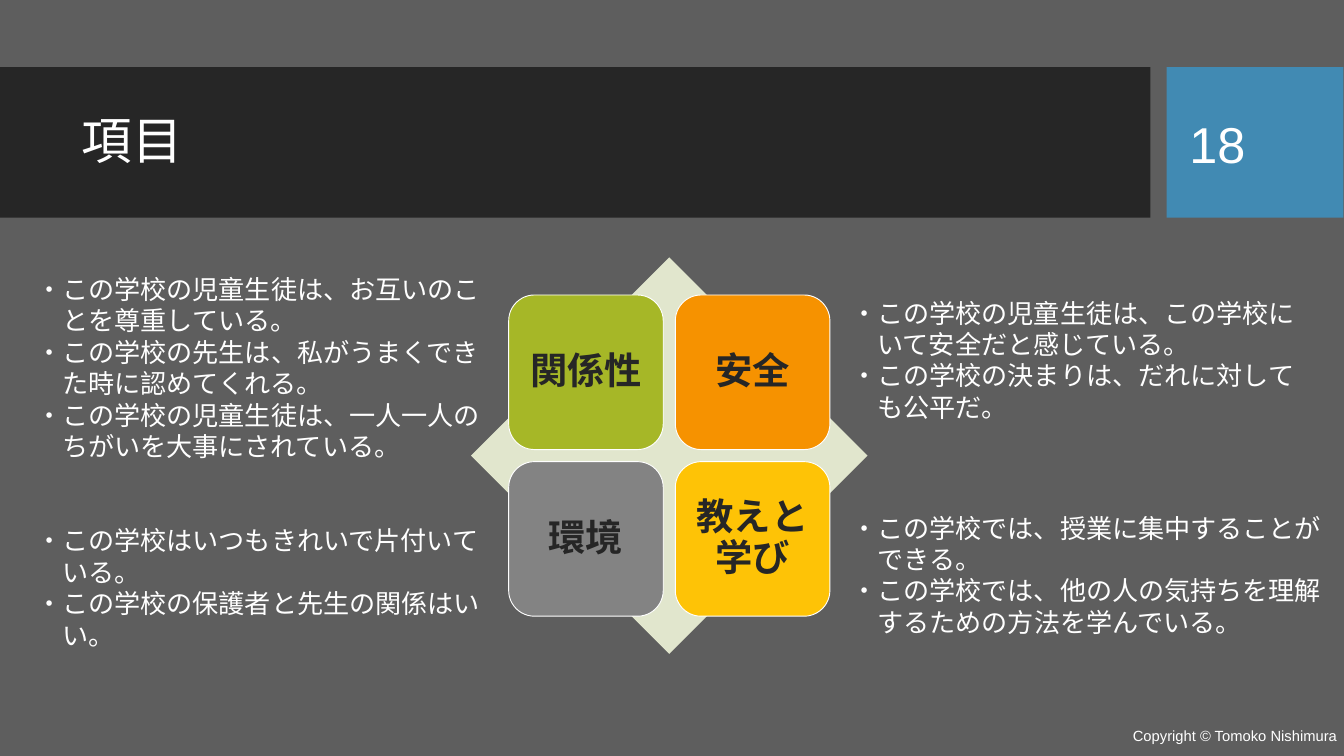
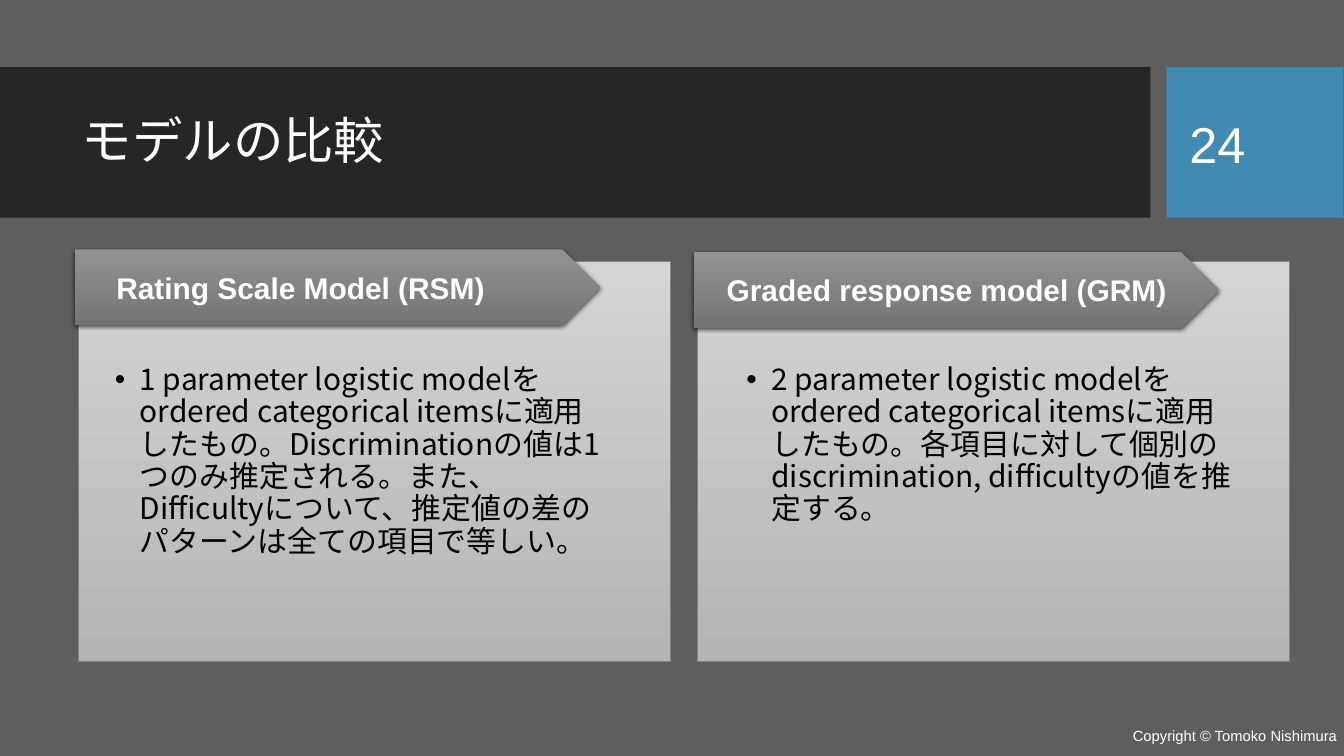
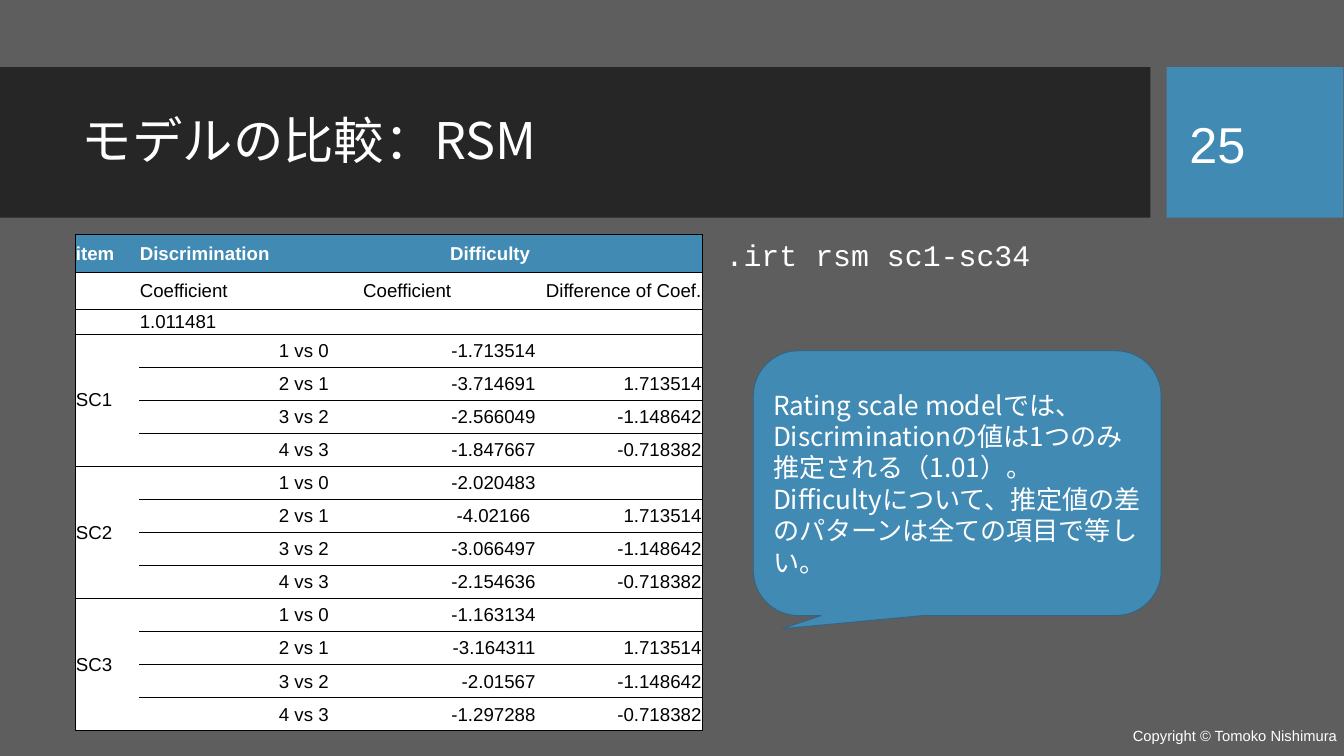
import dataclasses

import pptx
import pptx.dml.color
import pptx.enum.shapes
import pptx.enum.text
import pptx.oxml.ns
import pptx.util
from lxml import etree

EMU_PER_PX = 9144  # 100 px to the inch
SHAPE = pptx.enum.shapes.MSO_SHAPE
ALIGN = pptx.enum.text.PP_ALIGN
ANCHOR = pptx.enum.text.MSO_ANCHOR
AUTO_SIZE = pptx.enum.text.MSO_AUTO_SIZE


@dataclasses.dataclass(frozen=True)
class Theme:
    # Colours
    background: str = "5E5E5E"
    band: str = "262626"
    accent: str = "418AB3"
    accent_edge: str = "306684"
    white: str = "FFFFFF"
    black: str = "000000"
    diamond: str = "E1E6CD"
    green: str = "A6B727"
    orange: str = "F69200"
    gray: str = "838383"
    yellow: str = "FEC306"
    panel: tuple = ("D5D5D5", "B4B4B4")
    tab: tuple = ("929292", "747474")
    # Fonts
    japanese: str = "Noto Sans CJK JP"
    latin: str = "Arial"
    code: str = "Courier New"
    # Type sizes in points
    title: float = 54
    tile: float = 40
    heading: float = 32
    body: float = 28
    table: float = 20
    footer: float = 15.8


THEME = Theme()

TILES = [
    ("関係性", THEME.green),
    ("安全", THEME.orange),
    ("環境", THEME.gray),
    ("教えと学び", THEME.yellow),
]
# Each list: left, top, width, height and its questions
QUESTION_LISTS = [
    ((1257, 437, 692, 199), [
        "・この学校の児童生徒は、この学校にいて安全だと感じている。",
        "・この学校の決まりは、だれに対しても公平だ。",
    ]),
    ((1257, 757, 724, 199), [
        "・この学校では、授業に集中することができる。",
        "・この学校では、他の人の気持ちを理解するための方法を学んでいる。",
    ]),
    ((44, 402, 682, 293), [
        "・この学校の児童生徒は、お互いのことを尊重している。",
        "・この学校の先生は、私がうまくできた時に認めてくれる。",
        "・この学校の児童生徒は、一人一人のちがいを大事にされている。",
    ]),
    ((44, 776, 682, 199), [
        "・この学校はいつもきれいで片付いている。",
        "・この学校の保護者と先生の関係はいい。",
    ]),
]
RSM_TEXT = (
    "1 parameter logistic modelをordered categorical itemsに適用したもの。"
    "Discriminationの値は1つのみ推定される。また、Difficultyについて、"
    "推定値の差のパターンは全ての項目で等しい。"
)
GRM_TEXT = (
    "2 parameter logistic modelをordered categorical itemsに適用したもの。"
    "各項目に対して個別のdiscrimination, difficultyの値を推定する。"
)
CALLOUT_TEXT = [
    "Rating scale modelでは、Discriminationの値は1つのみ推定される（1.01）。",
    "Difficultyについて、推定値の差のパターンは全ての項目で等しい。",
]
STEPS = ["1 vs 0", "2 vs 1", "3 vs 2", "4 vs 3"]
STEP_DIFFERENCES = ["", "1.713514", "-1.148642", "-0.718382"]
DIFFICULTIES = {
    "SC1": ["-1.713514", "-3.714691", "-2.566049", "-1.847667"],
    "SC2": ["-2.020483", "-4.02166 ", "-3.066497", "-2.154636"],
    "SC3": ["-1.163134", "-3.164311", "-2.01567", "-1.297288"],
}


# Basic helpers
def px(length):
    return pptx.util.Emu(int(length * EMU_PER_PX))


def rgb(colour):
    return pptx.dml.color.RGBColor.from_string(colour)


def add_xml(parent, tag, **attributes):
    return etree.SubElement(parent, pptx.oxml.ns.qn(tag), **attributes)


def write(text_frame, paragraphs, size, font=THEME.japanese, colour=THEME.white,
          bold=False, align=ALIGN.LEFT, spacing=None, hanging=0, bullet=None):
    for index, text in enumerate(paragraphs):
        paragraph = text_frame.paragraphs[0] if index == 0 else text_frame.add_paragraph()
        properties = paragraph._p.get_or_add_pPr()
        if hanging:
            properties.set("marL", str(px(hanging)))
            properties.set("indent", str(-px(hanging)))
        if bullet:
            add_xml(properties, "a:buFont", typeface=THEME.latin)
            add_xml(properties, "a:buChar", char=bullet)
        paragraph.alignment = align
        if spacing:
            paragraph.line_spacing = spacing
        run = paragraph.add_run()
        run.text = text
        run.font.size = pptx.util.Pt(size)
        run.font.bold = bold
        run.font.color.rgb = rgb(colour)
        run.font.name = font
        add_xml(run._r.get_or_add_rPr(), "a:ea", typeface=font)


def add_text(slide, box, paragraphs, size, anchor=ANCHOR.TOP, wrap=True,
             grow=False, **style):
    text_frame = slide.shapes.add_textbox(*map(px, box)).text_frame
    text_frame.word_wrap = wrap
    text_frame.vertical_anchor = anchor
    text_frame.auto_size = AUTO_SIZE.SHAPE_TO_FIT_TEXT if grow else AUTO_SIZE.NONE
    write(text_frame, paragraphs, size, **style)


def add_block(slide, kind, box, fill, line=None, line_width=1.0):
    """Add a shape; a pair of colours as fill makes a top-to-bottom gradient."""
    shape = slide.shapes.add_shape(kind, *map(px, box))
    shape.shadow.inherit = False
    if isinstance(fill, tuple):
        shape.fill.gradient()
        shape.fill.gradient_angle = 270
        for stop, colour in zip(shape.fill.gradient_stops, fill):
            stop.color.rgb = rgb(colour)
    else:
        shape.fill.solid()
        shape.fill.fore_color.rgb = rgb(fill)
    if line:
        shape.line.color.rgb = rgb(line)
        shape.line.width = pptx.util.Pt(line_width)
    else:
        shape.line.fill.background()
    return shape


def add_shadow(shape):
    effects = shape._element.spPr.find(pptx.oxml.ns.qn("a:effectLst"))
    shadow = add_xml(effects, "a:outerShdw", blurRad=str(pptx.util.Pt(4.5)),
                     dist=str(pptx.util.Pt(1.5)), dir="5400000", rotWithShape="0")
    colour = add_xml(shadow, "a:srgbClr", val=THEME.black)
    add_xml(colour, "a:alpha", val="63000")


# Parts every slide shares
def add_framed_slide(presentation, title, number):
    slide = presentation.slides.add_slide(presentation.slide_layouts[6])
    add_block(slide, SHAPE.RECTANGLE, (0, 100, 1712, 224), THEME.band)
    add_block(slide, SHAPE.RECTANGLE, (1736, 100, 263, 224), THEME.accent)
    add_text(slide, (112, 124, 1577, 177), [title], THEME.title,
             anchor=ANCHOR.MIDDLE, spacing=0.9)
    add_text(slide, (1760, 124, 189, 179), [str(number)], THEME.title,
             anchor=ANCHOR.MIDDLE, font=THEME.latin)
    add_text(slide, (1676, 1065, 324, 60), ["Copyright © Tomoko Nishimura"],
             THEME.footer, anchor=ANCHOR.MIDDLE, font=THEME.latin)
    return slide


# Item matrix
def add_tile(slide, left, top, label, colour):
    tile = add_block(slide, SHAPE.ROUNDED_RECTANGLE, (left, top, 230, 230),
                     colour, THEME.white)
    text_frame = tile.text_frame
    text_frame.word_wrap = True
    text_frame.margin_left = text_frame.margin_right = px(17)
    text_frame.margin_top = text_frame.margin_bottom = px(17)
    write(text_frame, [label], THEME.tile, colour=THEME.band, bold=True,
          align=ALIGN.CENTER, spacing=0.9)


def add_item_matrix(slide):
    add_block(slide, SHAPE.DIAMOND, (701, 383, 590, 590), THEME.diamond)
    for index, (label, colour) in enumerate(TILES):
        row, column = divmod(index, 2)
        add_tile(slide, 757 + 248 * column, 439 + 248 * row, label, colour)


# Model panels
def add_model_panel(slide, panel_left, tab_box, text_left, heading, text,
                    align, tab_inset):
    add_block(slide, SHAPE.RECTANGLE, (panel_left, 389, 882, 595), THEME.panel,
              THEME.gray, 0.75)
    tab = add_block(slide, SHAPE.PENTAGON, tab_box, THEME.tab)
    add_shadow(tab)
    tab.text_frame.word_wrap = True
    tab.text_frame.margin_left = px(tab_inset)
    write(tab.text_frame, [heading], THEME.heading, font=THEME.latin, bold=True,
          align=align)
    add_text(slide, (text_left, 538, 749, 374), [text], THEME.heading,
             colour=THEME.black, spacing=0.9, hanging=37, bullet="•")


# Coefficient table
def set_borders(cell, visible):
    properties = cell._tc.get_or_add_tcPr()
    for side in "LRTB":
        line = add_xml(properties, f"a:ln{side}", w=str(pptx.util.Pt(1)))
        if side in visible:
            add_xml(add_xml(line, "a:solidFill"), "a:srgbClr", val=THEME.black)
        else:
            add_xml(line, "a:noFill")


def coefficient_rows():
    rows = [
        ["item", "Discrimination", "Difficulty", "", ""],
        ["", "Coefficient", "Coefficient", "", "Difference of Coef."],
        ["", "1.011481", "", "", ""],
    ]
    for item, values in DIFFICULTIES.items():
        for index, step in enumerate(STEPS):
            rows.append([item if index == 0 else "", "", step, values[index],
                         STEP_DIFFERENCES[index]])
    return rows


def add_coefficient_table(slide):
    rows = coefficient_rows()
    widths = [95, 207, 174, 210, 247]
    table_height, top_heights = 739, [56, 56, 36]
    step_count = len(rows) - len(top_heights)
    step_height = (table_height - sum(top_heights)) / step_count
    frame = slide.shapes.add_table(len(rows), len(widths), px(112), px(349),
                                   px(sum(widths)), px(table_height))
    table = frame.table
    table.first_row = table.horz_banding = False
    for column, width in zip(table.columns, widths):
        column.width = px(width)
    for row, height in zip(table.rows, top_heights + [step_height] * step_count):
        row.height = px(height)

    # Merged cells: two headings and one label per item
    table.cell(0, 2).merge(table.cell(0, 4))
    table.cell(1, 2).merge(table.cell(1, 3))
    for first in range(len(top_heights), len(rows), len(STEPS)):
        table.cell(first, 0).merge(table.cell(first + len(STEPS) - 1, 0))

    for row, values in enumerate(rows):
        for column, value in enumerate(values):
            cell = table.cell(row, column)
            span = cell.span_width if cell.is_merge_origin else 1
            visible = "" if cell.is_spanned else "TB"
            if visible and column == 0:
                visible += "L"
            if visible and column + span == len(widths):
                visible += "R"
            set_borders(cell, visible)
            cell.fill.solid()
            cell.fill.fore_color.rgb = rgb(THEME.white if row else THEME.accent)
            cell.vertical_anchor = ANCHOR.MIDDLE
            cell.margin_left = cell.margin_right = cell.margin_top = px(1)
            cell.margin_bottom = 0
            if value:
                align = ALIGN.RIGHT if column > 2 else ALIGN.LEFT
                if span > 1:
                    align = ALIGN.CENTER
                write(cell.text_frame, [value], THEME.table, font=THEME.latin,
                      colour=THEME.black if row else THEME.white,
                      bold=row == 0, align=align)


def add_callout(slide):
    callout = add_block(slide, SHAPE.ROUNDED_RECTANGULAR_CALLOUT,
                        (1121, 522, 607, 394), THEME.accent, THEME.accent_edge)
    for index, value in enumerate((-0.43, 0.55, 0.17)):
        callout.adjustments[index] = value
    callout.text_frame.word_wrap = True
    write(callout.text_frame, CALLOUT_TEXT, THEME.body)


def main():
    presentation = pptx.Presentation()
    presentation.slide_width = px(2000)
    presentation.slide_height = px(1125)
    background = presentation.slide_master.background.fill
    background.solid()
    background.fore_color.rgb = rgb(THEME.background)

    # Items
    slide = add_framed_slide(presentation, "項目", 18)
    add_item_matrix(slide)
    for box, questions in QUESTION_LISTS:
        add_text(slide, box, questions, THEME.body, grow=True, hanging=39)

    # Model comparison
    slide = add_framed_slide(presentation, "モデルの比較", 24)
    add_model_panel(slide, 116, (111, 371, 782, 113), 161,
                    "Rating Scale Model (RSM)", RSM_TEXT, ALIGN.LEFT, 62)
    add_model_panel(slide, 1037, (1032, 375, 782, 113), 1101,
                    "Graded response model (GRM)", GRM_TEXT, ALIGN.CENTER, 10)

    # RSM results
    slide = add_framed_slide(presentation, "モデルの比較：RSM", 25)
    add_coefficient_table(slide)
    add_callout(slide)
    add_text(slide, (1070, 347, 479, 64), [".irt rsm sc1-sc34"], THEME.heading,
             wrap=False, grow=True, font=THEME.code)

    presentation.save("out.pptx")


if __name__ == "__main__":
    main()
